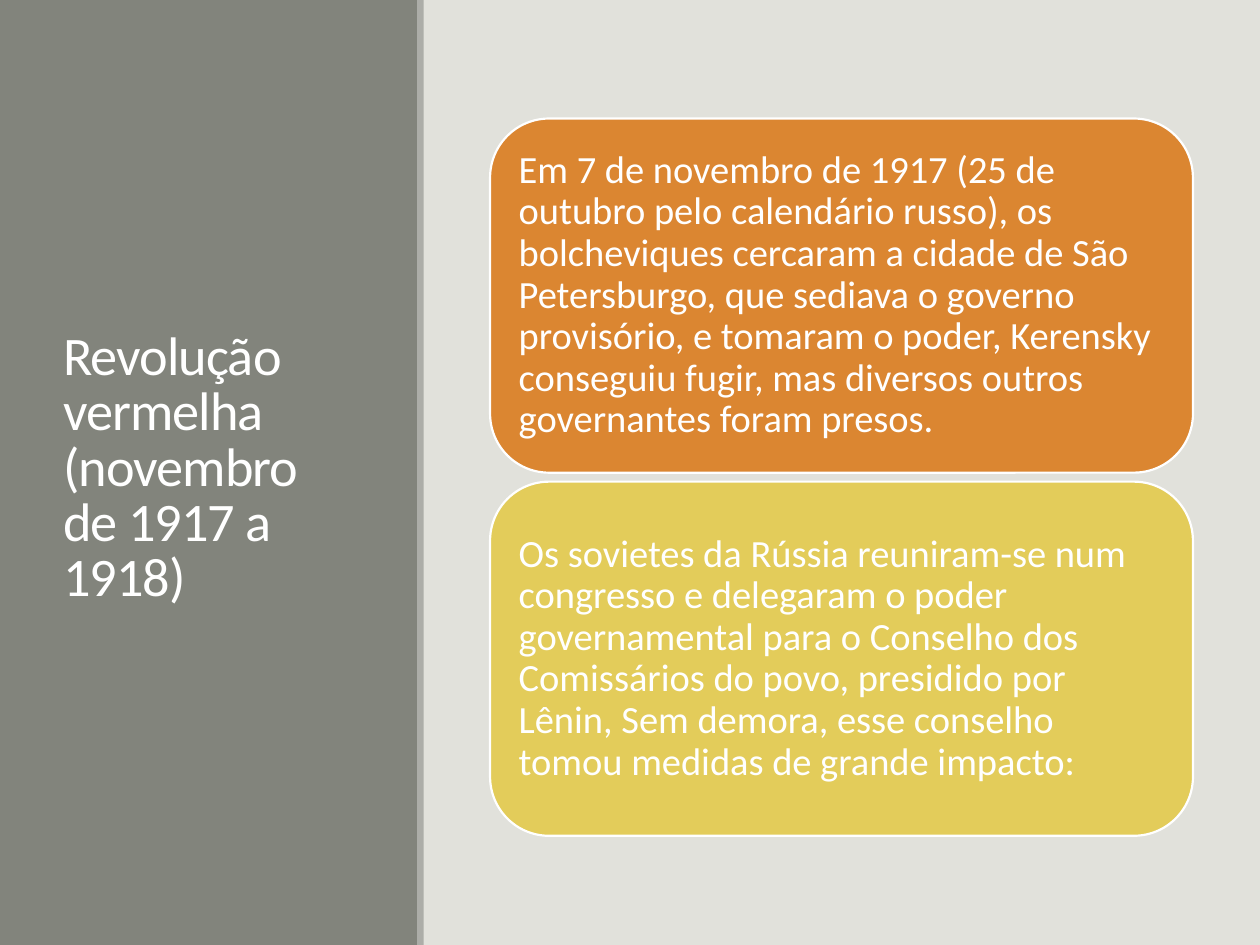
from pptx import Presentation
from pptx.dml.color import RGBColor
from pptx.enum.shapes import MSO_SHAPE
from pptx.enum.text import MSO_ANCHOR, MSO_AUTO_SIZE, PP_ALIGN
from pptx.util import Cm, Pt

RECTANGLE = MSO_SHAPE.RECTANGLE
ROUNDED = MSO_SHAPE.ROUNDED_RECTANGLE
MIDDLE = MSO_ANCHOR.MIDDLE
LEFT = PP_ALIGN.LEFT
NO_AUTOFIT = MSO_AUTO_SIZE.NONE

TITLE_ONLY_LAYOUT = 5
FONT = "Calibri"
COLORS = {
    "background": "E1E1DB",
    "panel": "82847C",
    "divider": "ACADA8",
    "orange": "DB8631",
    "yellow": "E3CC5A",
    "white": "FFFFFF",
}
SLIDE_WIDTH, SLIDE_HEIGHT = 25.4, 19.05
CARD_LEFT, CARD_TOP = 9.88, 2.39
CARD_WIDTH, CARD_HEIGHT, CARD_GAP = 14.17, 7.14, 0.18
CARD_INSET = 0.23

TITLE = "Revolução vermelha (novembro de 1917 a 1918)"
CARDS = [
    ("orange",
     "Em 7 de novembro de 1917 (25 de outubro pelo calendário russo), os "
     "bolcheviques cercaram a cidade de São Petersburgo, que sediava o governo "
     "provisório, e tomaram o poder, Kerensky conseguiu fugir, mas diversos "
     "outros governantes foram presos."),
    ("yellow",
     "Os sovietes da Rússia reuniram-se num congresso e delegaram o poder "
     "governamental para o Conselho dos Comissários do povo, presidido por "
     "Lênin, Sem demora, esse conselho tomou medidas de grande impacto:"),
]


def color(name):
    return RGBColor.from_string(COLORS[name])


def add_block(slide, kind, left, top, width, height, fill):
    """Add a filled shape without outline or shadow; lengths in centimetres."""
    shape = slide.shapes.add_shape(kind, Cm(left), Cm(top), Cm(width), Cm(height))
    shape.shadow.inherit = False
    shape.fill.solid()
    shape.fill.fore_color.rgb = color(fill)
    shape.line.fill.background()
    return shape


def write_text(shape, text, size, line_spacing):
    """Fill a shape with one white, left-aligned, vertically centred paragraph."""
    frame = shape.text_frame
    frame.text = text
    frame.word_wrap = True
    frame.auto_size = NO_AUTOFIT
    frame.vertical_anchor = MIDDLE
    paragraph = frame.paragraphs[0]
    paragraph.alignment = LEFT
    paragraph.line_spacing = line_spacing
    paragraph.font.name = FONT
    paragraph.font.size = Pt(size)
    paragraph.font.color.rgb = color("white")
    return frame


def add_card(slide, top, fill, text):
    card = add_block(slide, ROUNDED, CARD_LEFT, top, CARD_WIDTH, CARD_HEIGHT, fill)
    card.line.color.rgb = color("white")
    card.line.width = Pt(1.25)
    frame = write_text(card, text, 22, 0.9)
    frame.margin_left = frame.margin_right = Cm(CARD_INSET)
    frame.margin_top = frame.margin_bottom = Cm(CARD_INSET)


def place_title(slide):
    title = slide.shapes.title
    title.left, title.top = Cm(1.02), Cm(1.45)
    title.width, title.height = Cm(6.43), Cm(16.03)
    frame = write_text(title, TITLE, 31, 0.85)
    run = frame.paragraphs[0].runs[0]
    run.font._element.set("spc", "-50")
    # Bring the title in front of the side panel
    slide.shapes._spTree.append(title._element)


def main():
    presentation = Presentation()
    presentation.slide_width = Cm(SLIDE_WIDTH)
    presentation.slide_height = Cm(SLIDE_HEIGHT)
    slide = presentation.slides.add_slide(
        presentation.slide_layouts[TITLE_ONLY_LAYOUT])
    slide.background.fill.solid()
    slide.background.fill.fore_color.rgb = color("background")

    add_block(slide, RECTANGLE, 0, 0, 8.43, SLIDE_HEIGHT, "panel")
    place_title(slide)
    add_block(slide, RECTANGLE, 8.41, 0, 0.13, SLIDE_HEIGHT, "divider")
    for index, (fill, text) in enumerate(CARDS):
        add_card(slide, CARD_TOP + index * (CARD_HEIGHT + CARD_GAP), fill, text)

    presentation.save("out.pptx")


if __name__ == "__main__":
    main()
